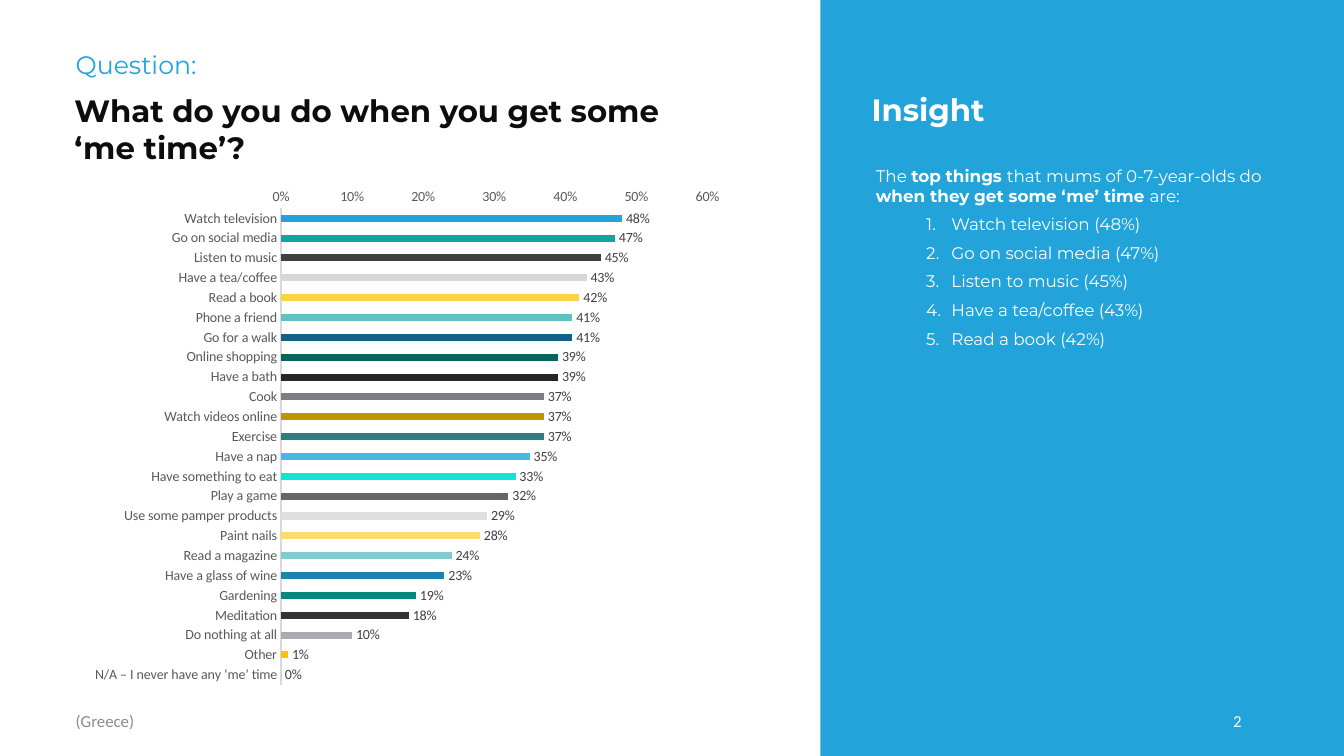
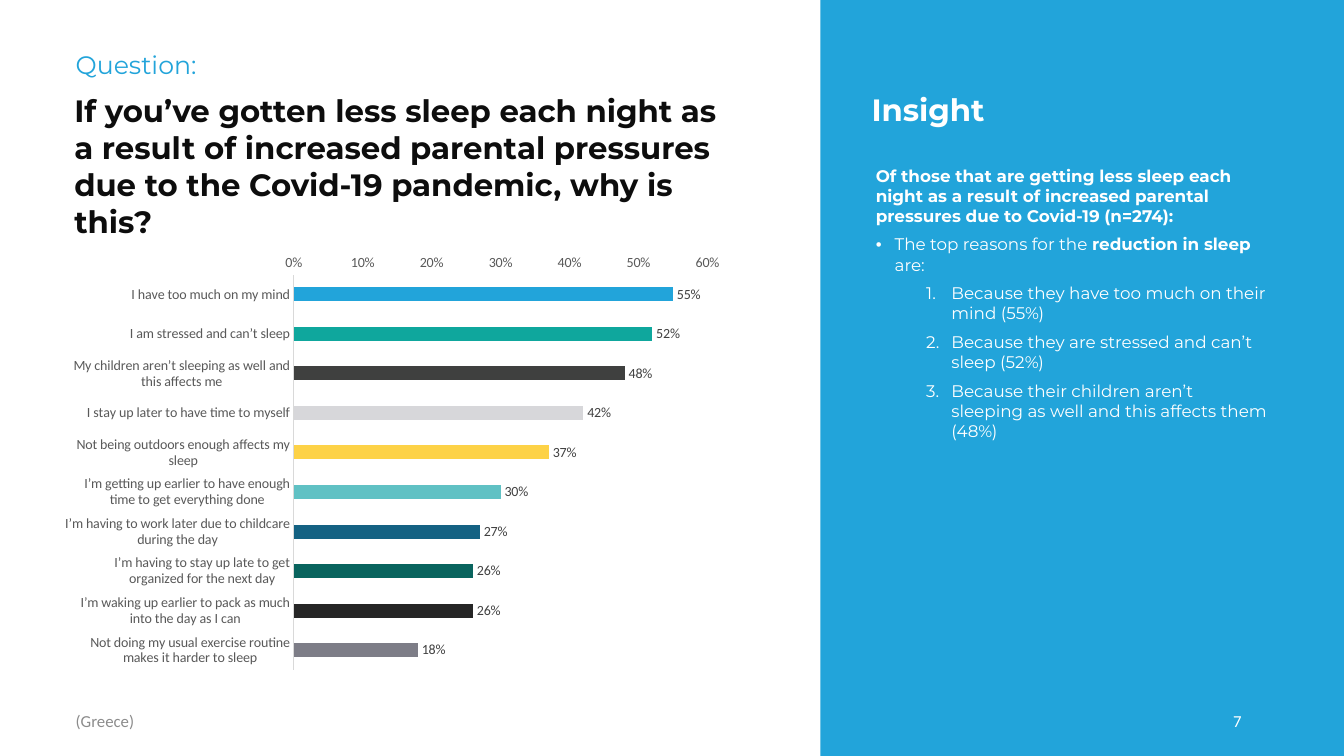
from lxml.etree import SubElement
from pptx import Presentation
from pptx.chart.data import CategoryChartData
from pptx.dml.color import RGBColor
from pptx.enum.chart import XL_CHART_TYPE as ChartType
from pptx.enum.chart import XL_LABEL_POSITION as LabelPosition
from pptx.enum.chart import XL_TICK_MARK as TickMark
from pptx.enum.shapes import MSO_SHAPE as Preset
from pptx.enum.text import MSO_ANCHOR as Anchor
from pptx.enum.text import PP_ALIGN as Align
from pptx.oxml.ns import qn
from pptx.util import Pt

# Shared look
HEADING_FONT, DATA_FONT = "Montserrat", "Calibri"
BLUE, WHITE, INK = "22A4DA", "FFFFFF", "0D0D0D"
AXIS_TEXT, AXIS_LINE, LABEL_TEXT, FOOTER_TEXT = "595959", "D9D9D9", "404040", "8C8C8C"
BAR_COLORS = [
    BLUE, "0FA79D", "3F403F", "D7D7DA", "FDD247", "60C1C4", "146283", "09645E",
    "262626", "7D7D87", "C09302", "2F7D80", "4CB7E3", "14E3D6", "656765", "DFDFE1",
    "FDDB6C", "80CDD0", "1B83AE", "0C867E", "323332", "AAAAB0", "FCC207", "3FA7AA",
]
SLIDE_WIDTH, SLIDE_HEIGHT = 960, 540
PANEL_LEFT = 586
CONTENT_LEFT, CONTENT_WIDTH = 46, 479
INSIGHT_WIDTH = 295
FOOTER_TOP, FOOTER_HEIGHT = 500.5, 29

# List styles: bullet tag, its attribute, level, text indent, hanging indent
LIST_STYLES = {
    "bullet": ("a:buChar", {"char": "•"}, 0, 13.5, 13.5),
    "number": ("a:buAutoNum", {"type": "arabicPeriod"}, 1, 54, 18),
}

# Content
ME_TIME = [
    ("Watch television", 0.48), ("Go on social media", 0.47),
    ("Listen to music", 0.45), ("Have a tea/coffee", 0.43),
    ("Read a book", 0.42), ("Phone a friend", 0.41),
    ("Go for a walk", 0.41), ("Online shopping", 0.39),
    ("Have a bath", 0.39), ("Cook", 0.37),
    ("Watch videos online", 0.37), ("Exercise", 0.37),
    ("Have a nap", 0.35), ("Have something to eat", 0.33),
    ("Play a game", 0.32), ("Use some pamper products", 0.29),
    ("Paint nails", 0.28), ("Read a magazine", 0.24),
    ("Have a glass of wine", 0.23), ("Gardening", 0.19),
    ("Meditation", 0.18), ("Do nothing at all", 0.1),
    ("Other", 0.01), ("N/A – I never have any ‘me’ time", 0),
]
LESS_SLEEP = [
    ("I have too much on my mind", 0.55),
    ("I am stressed and can’t sleep", 0.52),
    ("My children aren’t sleeping as well and this affects me", 0.48),
    ("I stay up later to have time to myself", 0.42),
    ("Not being outdoors enough affects my sleep", 0.37),
    ("I’m getting up earlier to have enough time to get everything done", 0.3),
    ("I’m having to work later due to childcare during the day", 0.27),
    ("I’m having to stay up late to get organized for the next day", 0.26),
    ("I’m waking up earlier to pack as much into the day as I can", 0.26),
    ("Not doing my usual exercise routine makes it harder to sleep", 0.18),
]
# Insight paragraphs are (style, text); ** switches bold on and off
ME_TIME_INSIGHT = [
    (None, "The **top things **that mums of 0-7-year-olds do "
           "**when they get some ‘me’ time **are:"),
    ("number", "Watch television (48%)"),
    ("number", "Go on social media (47%)"),
    ("number", "Listen to music (45%)"),
    ("number", "Have a tea/coffee (43%)"),
    ("number", "Read a book (42%)"),
]
LESS_SLEEP_INSIGHT = [
    (None, "**Of those that are getting less sleep each night as a result of "
           "increased parental pressures due to Covid-19 (n=274):**"),
    ("bullet", "The top reasons for the **reduction in sleep **are:"),
    ("number", "Because they have too much on their mind (55%)"),
    ("number", "Because they are stressed and can’t sleep (52%)"),
    ("number", "Because their children aren’t sleeping as well and this affects them (48%)"),
]


def rgb(value):
    return RGBColor.from_string(value)


def set_font(font, size, color, name=DATA_FONT, bold=False):
    font.size, font.name, font.bold = Pt(size), name, bold
    font.color.rgb = rgb(color)


def set_list_style(paragraph, style):
    tag, attributes, level, indent, hanging = LIST_STYLES[style]
    paragraph.level = level
    properties = paragraph._p.get_or_add_pPr()
    properties.set("marL", str(Pt(indent)))
    properties.set("indent", str(-Pt(hanging)))
    SubElement(properties, qn("a:buFont"), typeface="Arial" if style == "bullet" else "+mj-lt")
    SubElement(properties, qn(tag), **attributes)


def add_text(slide, box, content, size=12, color=WHITE, font=HEADING_FONT, bold=False,
             align=Align.LEFT, anchor=Anchor.TOP, space_after=0):
    """Add a text box; content is a string or a list of (style, text)."""
    frame = slide.shapes.add_textbox(*map(Pt, box)).text_frame
    frame.word_wrap = True
    frame.vertical_anchor = anchor
    paragraphs = [(None, content)] if isinstance(content, str) else content
    for index, (style, text) in enumerate(paragraphs):
        paragraph = frame.add_paragraph() if index else frame.paragraphs[0]
        if style:
            set_list_style(paragraph, style)
        paragraph.alignment = align
        paragraph.space_after = Pt(space_after)
        for part, piece in enumerate(text.split("**")):
            if piece:
                run = paragraph.add_run()
                run.text = piece
                set_font(run.font, size, color, font, bold or part % 2 == 1)


def add_panel(slide):
    shape = slide.shapes.add_shape(
        Preset.RECTANGLE, Pt(PANEL_LEFT), 0, Pt(SLIDE_WIDTH - PANEL_LEFT), Pt(SLIDE_HEIGHT))
    shape.shadow.inherit = False
    shape.fill.solid()
    shape.fill.fore_color.rgb = rgb(BLUE)
    shape.line.fill.background()


def set_plot_layout(chart, x, y, width, height):
    """Fix the inner plot area, in fractions of the chart."""
    plot_area = chart.element.find(".//" + qn("c:plotArea"))
    layout = plot_area.find(qn("c:layout"))
    if layout is not None:
        plot_area.remove(layout)
    layout = SubElement(plot_area, qn("c:layout"))
    plot_area.insert(0, layout)
    manual = SubElement(layout, qn("c:manualLayout"))
    settings = [("layoutTarget", "inner"), ("xMode", "edge"), ("yMode", "edge"),
                ("x", x), ("y", y), ("w", width), ("h", height)]
    for name, value in settings:
        SubElement(manual, qn("c:" + name), val=str(value))


def format_axes(chart):
    categories, values = chart.category_axis, chart.value_axis
    for axis in (categories, values):
        axis.has_major_gridlines = False
        axis.major_tick_mark = axis.minor_tick_mark = TickMark.NONE
        set_font(axis.tick_labels.font, 10, AXIS_TEXT)
    categories.reverse_order = True
    categories.format.line.color.rgb = rgb(AXIS_LINE)
    categories.format.line.width = Pt(0.75)
    values.minimum_scale, values.maximum_scale, values.major_unit = 0, 0.6, 0.1
    values.format.line.fill.background()
    values.tick_labels.number_format = "0%"
    values.tick_labels.number_format_is_linked = False


def add_bar_chart(slide, answers, top, height, plot_left):
    data = CategoryChartData(number_format="0%")
    data.categories = [label for label, _ in answers]
    data.add_series("Series 1", [share for _, share in answers])
    chart = slide.shapes.add_chart(
        ChartType.BAR_CLUSTERED, Pt(CONTENT_LEFT), Pt(top), Pt(CONTENT_WIDTH), Pt(height),
        data).chart
    chart.has_title = chart.has_legend = False
    set_font(chart.font, 10, "000000")
    format_axes(chart)
    set_plot_layout(chart, plot_left, 0.066, round(0.959 - plot_left, 3), 0.904)

    # Bars and their labels
    plot = chart.plots[0]
    plot.gap_width = 182
    plot.vary_by_categories = False
    series = plot.series[0]
    for index, color in enumerate(BAR_COLORS[:len(answers)]):
        fill = series.points[index].format.fill
        fill.solid()
        fill.fore_color.rgb = rgb(color)
    labels = series.data_labels
    labels.show_value = True
    labels.position = LabelPosition.OUTSIDE_END
    labels.number_format, labels.number_format_is_linked = "0%", False
    set_font(labels.font, 10, LABEL_TEXT)


def add_question_slide(presentation, number, question, question_height, insight,
                       answers, chart_top, chart_height, plot_left):
    slide = presentation.slides.add_slide(presentation.slide_layouts[6])
    add_panel(slide)

    # Question and chart
    add_text(slide, (47, 32, 382, 29), "Question:", size=18, color=BLUE)
    add_text(slide, (CONTENT_LEFT, 62, CONTENT_WIDTH, question_height), question,
             size=22, color=INK, bold=True)
    add_bar_chart(slide, answers, chart_top, chart_height, plot_left)

    # Insight
    add_text(slide, (615.5, 61.5, INSIGHT_WIDTH, 34), "Insight", size=22, bold=True)
    add_text(slide, (618.5, 114.5, INSIGHT_WIDTH, 206), insight, space_after=6)

    # Footer
    add_text(slide, (47, FOOTER_TOP, 324, FOOTER_HEIGHT), "(Greece)",
             color=FOOTER_TEXT, font=DATA_FONT, anchor=Anchor.MIDDLE)
    add_text(slide, (678, FOOTER_TOP, 216, FOOTER_HEIGHT), str(number),
             font=DATA_FONT, align=Align.RIGHT, anchor=Anchor.MIDDLE)


def main():
    presentation = Presentation()
    presentation.slide_width, presentation.slide_height = Pt(SLIDE_WIDTH), Pt(SLIDE_HEIGHT)
    add_question_slide(
        presentation, 2, "What do you do when you get some ‘me time’?", 60.5,
        ME_TIME_INSIGHT, ME_TIME, chart_top=124, chart_height=376.5, plot_left=0.323)
    add_question_slide(
        presentation, 7,
        "If you’ve gotten less sleep each night as a result of increased parental "
        "pressures due to the Covid-19 pandemic, why is this?", 114,
        LESS_SLEEP_INSIGHT, LESS_SLEEP, chart_top=175.5, chart_height=312.5, plot_left=0.342)
    presentation.save("out.pptx")


if __name__ == "__main__":
    main()
